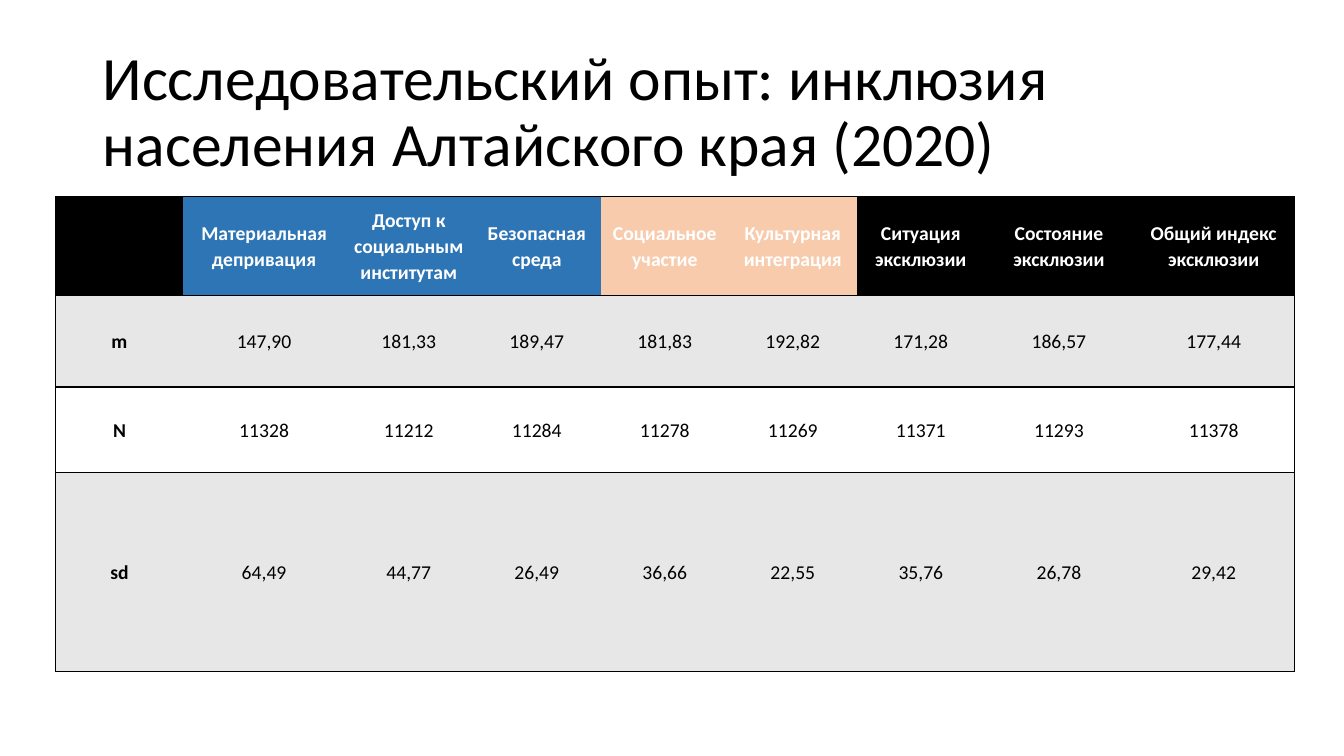
from lxml.etree import SubElement
from pptx import Presentation
from pptx.dml.color import RGBColor
from pptx.enum.text import MSO_ANCHOR, PP_ALIGN
from pptx.oxml.ns import qn
from pptx.util import Emu, Pt

PX = 9144  # EMU per px, 100 px to the inch
FONT = "Calibri"
COLORS = {
    "black": "000000",
    "white": "FFFFFF",
    "blue": "2E75B6",
    "peach": "F8CBAD",
    "gray": "E7E7E7",
}
TITLE = "Исследовательский опыт: инклюзия населения Алтайского края (2020)"
HEADER = [
    ("", "black"),
    ("Материальная депривация", "blue"),
    ("Доступ к социальным институтам", "blue"),
    ("Безопасная среда", "blue"),
    ("Социальное участие", "peach"),
    ("Культурная интеграция", "peach"),
    ("Ситуация эксклюзии", "black"),
    ("Состояние эксклюзии", "black"),
    ("Общий индекс эксклюзии", "black"),
]
STATISTICS = [
    ("m", "147,90", "181,33", "189,47", "181,83", "192,82", "171,28", "186,57", "177,44"),
    ("N", "11328", "11212", "11284", "11278", "11269", "11371", "11293", "11378"),
    ("sd", "64,49", "44,77", "26,49", "36,66", "22,55", "35,76", "26,78", "29,42"),
]
COL_WIDTHS = [127, 160, 127, 127, 127, 127, 127, 147, 160]
ROW_HEIGHTS = [98, 91, 85, 197]


def px(n):
    return Emu(n * PX)


def rgb(name):
    return RGBColor.from_string(COLORS[name])


def format_text(tf, size, color, spacing, bold=False, align=PP_ALIGN.LEFT):
    for p in tf.paragraphs:
        p.alignment = align
        p.line_spacing = spacing
        for r in p.runs:
            r.font.name = FONT
            r.font.size = Pt(size)
            r.font.bold = bold
            r.font.color.rgb = rgb(color)


def add_title(slide):
    tf = slide.shapes.add_textbox(px(92), px(40), px(1150), px(145)).text_frame
    tf.word_wrap = True
    tf.vertical_anchor = MSO_ANCHOR.MIDDLE
    tf.text = TITLE
    format_text(tf, 44, "black", 0.9)


def set_borders(cell, visible):
    """Draw black 1 pt lines on the visible sides (of L, R, T, B) and none on the rest."""
    tcPr = cell._tc.get_or_add_tcPr()
    for side in "LRTB":
        ln = SubElement(tcPr, qn(f"a:ln{side}"), w=str(Pt(1)))
        if side in visible:
            fill = SubElement(ln, qn("a:solidFill"))
            SubElement(fill, qn("a:srgbClr"), val=COLORS["black"])
        else:
            SubElement(ln, qn("a:noFill"))


def fill_cell(cell, text, fill, color, bold, borders):
    set_borders(cell, borders)
    cell.fill.solid()
    cell.fill.fore_color.rgb = rgb(fill)
    cell.vertical_anchor = MSO_ANCHOR.MIDDLE
    cell.margin_left = cell.margin_right = px(7)
    cell.margin_top = cell.margin_bottom = 0
    cell.text_frame.text = text
    format_text(cell.text_frame, 14, color, 1.07, bold, PP_ALIGN.CENTER)


def add_index_table(slide):
    n_rows, n_cols = len(ROW_HEIGHTS), len(COL_WIDTHS)
    table = slide.shapes.add_table(
        n_rows, n_cols, px(55), px(195), px(sum(COL_WIDTHS)), px(sum(ROW_HEIGHTS))
    ).table
    for column, width in zip(table.columns, COL_WIDTHS):
        column.width = px(width)
    for row, height in zip(table.rows, ROW_HEIGHTS):
        row.height = px(height)

    borders = ["LTB"] + ["TB"] * (n_cols - 2) + ["RTB"]
    for j, (label, fill) in enumerate(HEADER):
        fill_cell(table.cell(0, j), label, fill, "white", True, borders[j])
    for i, values in enumerate(STATISTICS, start=1):
        fill = "gray" if i % 2 else "white"
        for j, value in enumerate(values):
            fill_cell(table.cell(i, j), value, fill, "black", j == 0, borders[j])


def main():
    prs = Presentation()
    prs.slide_width, prs.slide_height = px(1333), px(750)
    slide = prs.slides.add_slide(prs.slide_layouts[6])
    add_title(slide)
    add_index_table(slide)
    prs.save("out.pptx")


if __name__ == "__main__":
    main()
